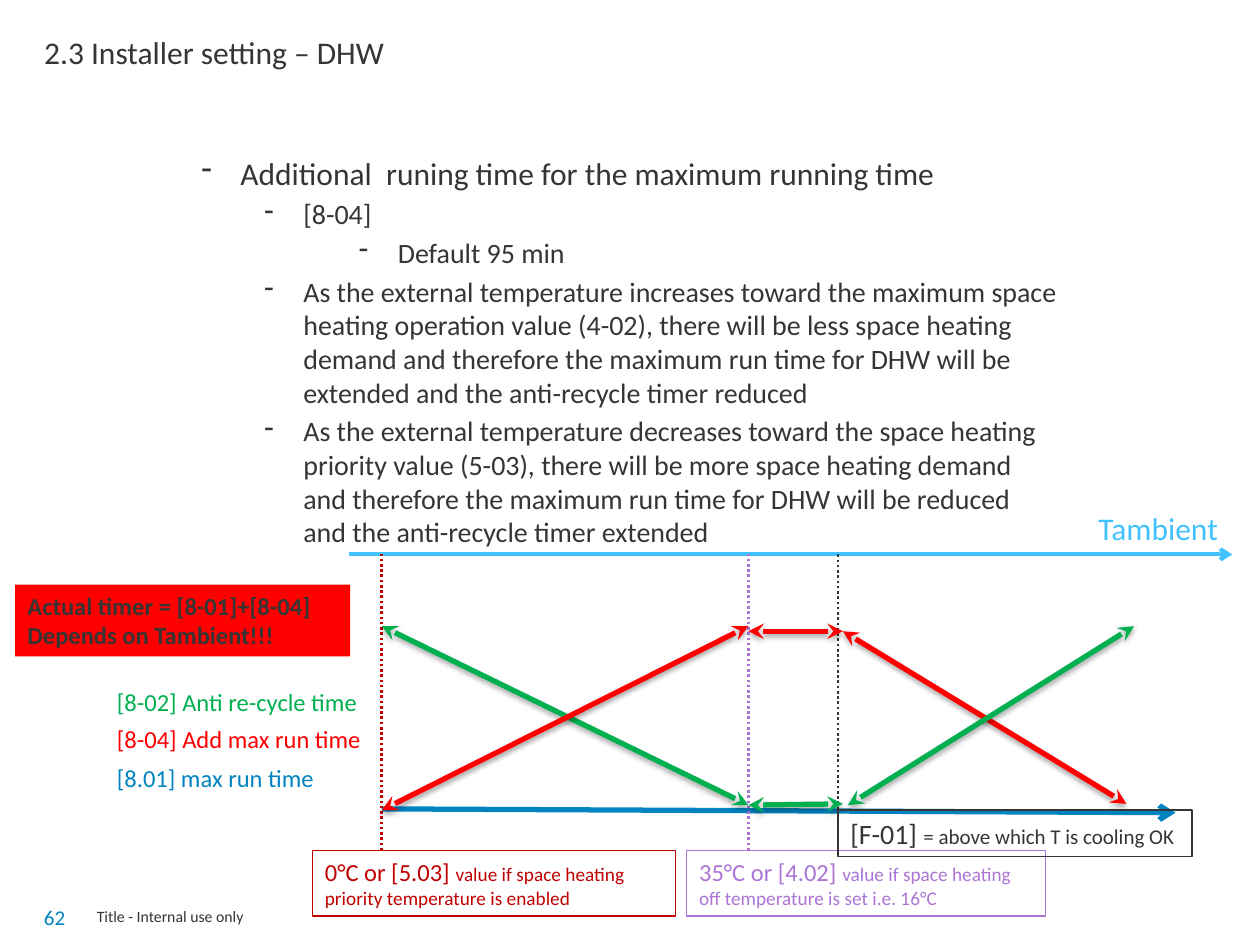
from lxml import etree
from pptx import Presentation
from pptx.dml.color import RGBColor
from pptx.enum.dml import MSO_LINE
from pptx.enum.shapes import MSO_CONNECTOR, MSO_SHAPE
from pptx.enum.text import MSO_ANCHOR, MSO_AUTO_SIZE, PP_ALIGN
from pptx.oxml.ns import qn
from pptx.util import Emu, Pt

PX = 9144  # EMU per px, 100 px to the inch
TOP, MIDDLE = MSO_ANCHOR.TOP, MSO_ANCHOR.MIDDLE
LEFT = PP_ALIGN.LEFT
STRAIGHT, RECTANGLE = MSO_CONNECTOR.STRAIGHT, MSO_SHAPE.RECTANGLE
DOTTED, NO_AUTOFIT = MSO_LINE.ROUND_DOT, MSO_AUTO_SIZE.NONE

THEME = {
    "font": "Calibri",
    "color": {"ink": "353535", "blue": "0083C1", "sky": "41C2FF", "red": "FF0000",
              "dark red": "C00000", "green": "00B050", "purple": "AB74D5"},
    "size": {"title": 18, "lead": 18, "body": 16, "key": 14, "page": 12,
             "detail": 11, "footer": 9},
    "line": {"thick": 3, "axis": 2.25, "dots": 1.5, "frame": 0.75},
}
SIZE, LINE = THEME["size"], THEME["line"]

# Content: a paragraph is a list of (text, size) spans
TITLE = "2.3 Installer setting – DHW"
BULLETS = [  # indent in px, size, text
    (31, "lead", "Additional  runing time for the maximum running time"),
    (81, "body", "[8-04]"),
    (156, "body", "Default 95 min"),
    (81, "body", "As the external temperature increases toward the maximum space heating "
     "operation value (4-02), there will be less space heating demand and therefore the "
     "maximum run time for DHW will be extended and the anti-recycle timer reduced"),
    (81, "body", "As the external temperature decreases toward the space heating priority "
     "value (5-03), there will be more space heating demand and therefore the maximum "
     "run time for DHW will be reduced and the anti-recycle timer extended"),
]
PLAIN_TEXTS = [  # left, top, width, height, colour, size, anchor, text
    (67, 707, 317, 40, "ink", "footer", MIDDLE, "Title - Internal use only"),
    (25, 700, 42, 55, "blue", "page", MIDDLE, "62"),
    (83, 540, 240, 34, "green", "key", TOP, "[8-02] Anti re-cycle time"),
    (83, 570, 240, 34, "red", "key", TOP, "[8-04] Add max run time"),
    (83, 601, 240, 34, "blue", "key", TOP, "[8.01] max run time"),
    (862, 399, 130, 40, "sky", "lead", TOP, "Tambient"),
]
TIMER = ["Actual timer = [8-01]+[8-04]", "Depends on Tambient!!!"]
THRESHOLDS = [  # left, top, width, height, colour, wrap, spans
    (248, 675, 288, 52, "dark red", True,
     [("0°C or [5.03] ", "key"),
      ("value if space heating priority temperature is enabled", "detail")]),
    (545, 675, 285, 52, "purple", True,
     [("35°C or [4.02] ", "key"),
      ("value if space heating off temperature is set i.e. 16°C", "detail")]),
    (665, 643, 281, 37, "ink", False,
     [("[F-01] ", "body"), ("= above which T is cooling OK", "page")]),
]

# Chart geometry
AXIS_Y, HIGH, LOW = 440, 497, 639
PRIORITY_X, OFF_X, COOLING_X = 303, 594, 665
AXES = [((303, 642), (933, 645), "blue", "thick"),
        ((277, AXIS_Y), (978, AXIS_Y), "sky", "axis")]
GUIDES = [(OFF_X, 675, "purple"), (PRIORITY_X, 675, "dark red"), (COOLING_X, 659, "ink")]
TRENDS = [
    ((OFF_X, 501), (669, 501), "red"),
    ((PRIORITY_X, HIGH), (OFF_X, LOW), "green"),
    ((PRIORITY_X, 643), (OFF_X, HIGH), "red"),
    ((OFF_X, LOW), (669, 638), "green"),
    ((669, 501), (894, 638), "red"),
    ((673, LOW), (900, HIGH), "green"),
]


def px(*values):
    return [Emu(value * PX) for value in values]


def rgb(name):
    return RGBColor.from_string(THEME["color"][name])


def write(shape, paragraphs, color="ink", bold=False, anchor=TOP, wrap=True,
          indents=None, before=0):
    """Fill a shape with paragraphs of (text, size) spans."""
    frame = shape.text_frame
    frame.word_wrap, frame.auto_size = wrap, NO_AUTOFIT
    frame.vertical_anchor = anchor
    for index, spans in enumerate(paragraphs):
        para = frame.add_paragraph() if index else frame.paragraphs[0]
        para.alignment = LEFT
        if indents:
            properties = para._p.get_or_add_pPr()
            properties.set("marL", str(indents[index] * PX))
            properties.set("indent", str(-31 * PX))
            etree.SubElement(properties, qn("a:buChar"), char="-")
        para.space_before = Pt(before if index else 0)
        for text, size in spans:
            span = para.add_run()
            span.text = text
            span.font.name, span.font.size = THEME["font"], Pt(SIZE[size])
            span.font.bold = bold
            span.font.color.rgb = rgb(color)


def add_box(page, place, fill=None, outline=None):
    box = page.shapes.add_shape(RECTANGLE, *px(*place))
    box.shadow.inherit = False
    if fill:
        box.fill.solid()
        box.fill.fore_color.rgb = rgb(fill)
    else:
        box.fill.background()
    if outline:
        box.line.color.rgb = rgb(outline)
        box.line.width = Pt(LINE["frame"])
    else:
        box.line.fill.background()
    return box


def add_line(page, start, end, color, width, dash=None, head=None, tail=None, shadow=False):
    connector = page.shapes.add_connector(STRAIGHT, *px(*start, *end))
    connector.line.color.rgb = rgb(color)
    connector.line.width = Pt(LINE[width])
    if dash:
        connector.line.dash_style = dash
    outline = connector.line._get_or_add_ln()
    for tag, kind in (("a:headEnd", head), ("a:tailEnd", tail)):
        if kind:
            etree.SubElement(outline, qn(tag), type=kind)
    effects = etree.SubElement(connector._element.spPr, qn("a:effectLst"))
    if shadow:
        outer = etree.SubElement(effects, qn("a:outerShdw"), blurRad=str(Pt(3.1)),
                                 dist=str(Pt(1.8)), dir="5400000", rotWithShape="0")
        black = etree.SubElement(outer, qn("a:srgbClr"), val="000000")
        etree.SubElement(black, qn("a:alpha"), val="35000")


def main():
    deck = Presentation()
    deck.slide_width, deck.slide_height = px(1000, 750)
    page = deck.slides.add_slide(deck.slide_layouts[5])

    # Title and bullets
    title = page.shapes.title
    title.left, title.top, title.width, title.height = px(25, 21, 948, 65)
    write(title, [[(TITLE, "title")]])
    body = page.shapes.add_textbox(*px(150, 117, 700, 533))
    write(body, [[(text, size)] for _, size, text in BULLETS],
          indents=[indent for indent, _, _ in BULLETS], before=3)

    # Axes, thresholds and trends
    for start, end, color, width in AXES:
        add_line(page, start, end, color, width, tail="arrow")
    for x, bottom, color in GUIDES:
        add_line(page, (x, bottom), (x, AXIS_Y), color, "dots", dash=DOTTED)
    for start, end, color in TRENDS:
        add_line(page, start, end, color, "thick", head="stealth", tail="stealth", shadow=True)

    # Labels
    for *place, color, size, anchor, text in PLAIN_TEXTS:
        label = page.shapes.add_textbox(*px(*place))
        write(label, [[(text, size)]], color=color, anchor=anchor)
    timer = add_box(page, (12, 464, 266, 57), fill="red")
    write(timer, [[(text, "key")] for text in TIMER], bold=True)
    for *place, color, wrap, spans in THRESHOLDS:
        write(add_box(page, place, outline=color), [spans], color=color, wrap=wrap)

    deck.save("out.pptx")


if __name__ == "__main__":
    main()
